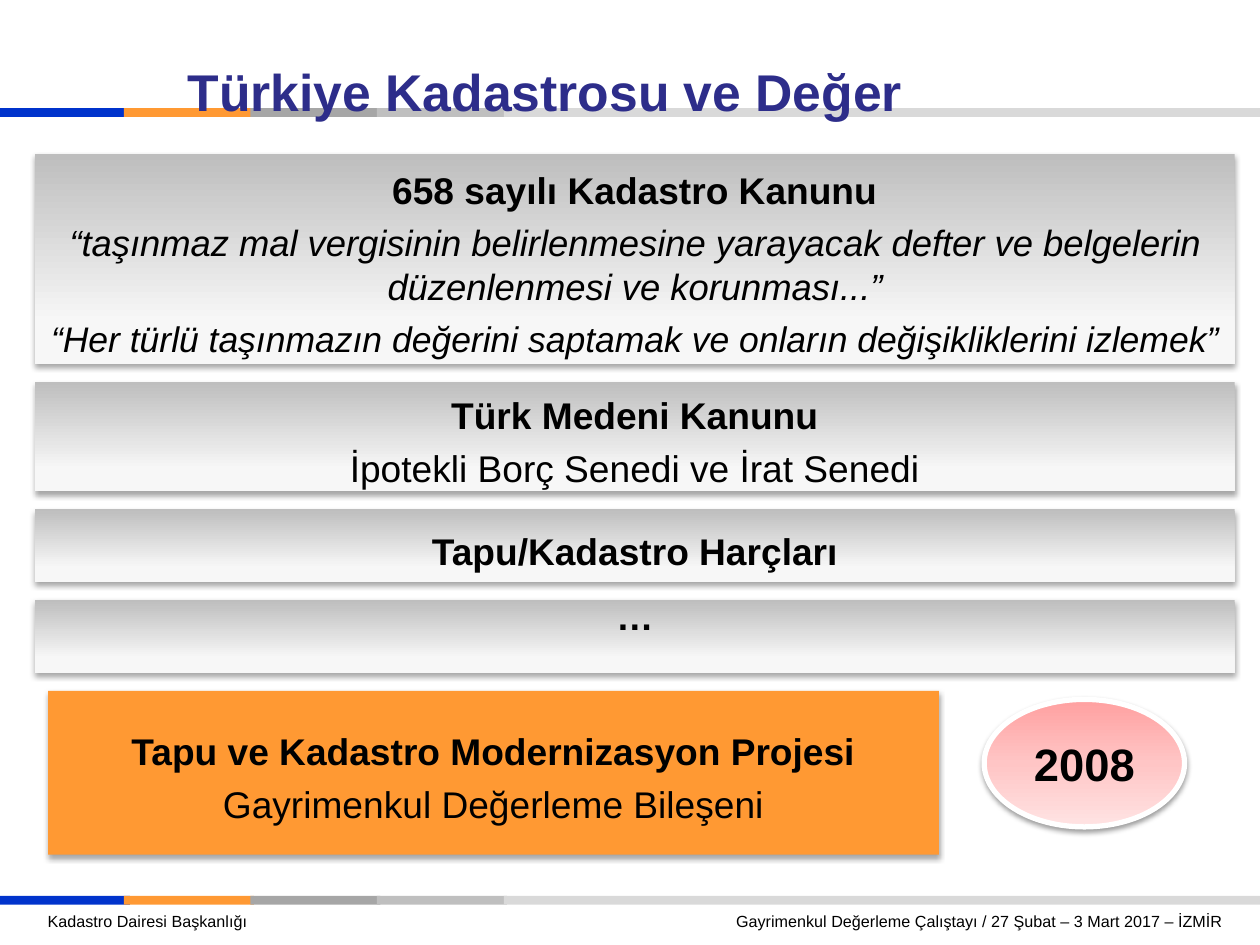
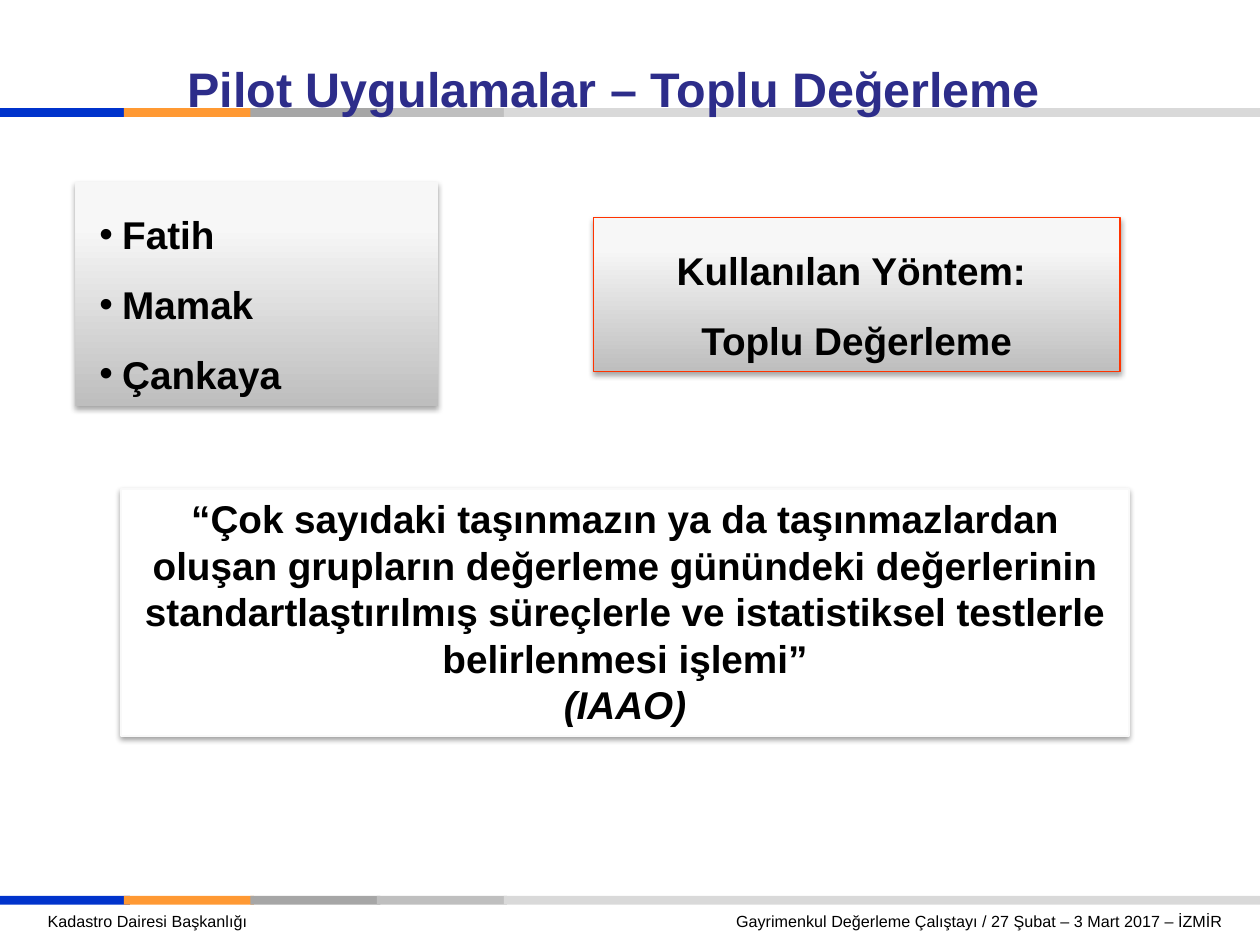
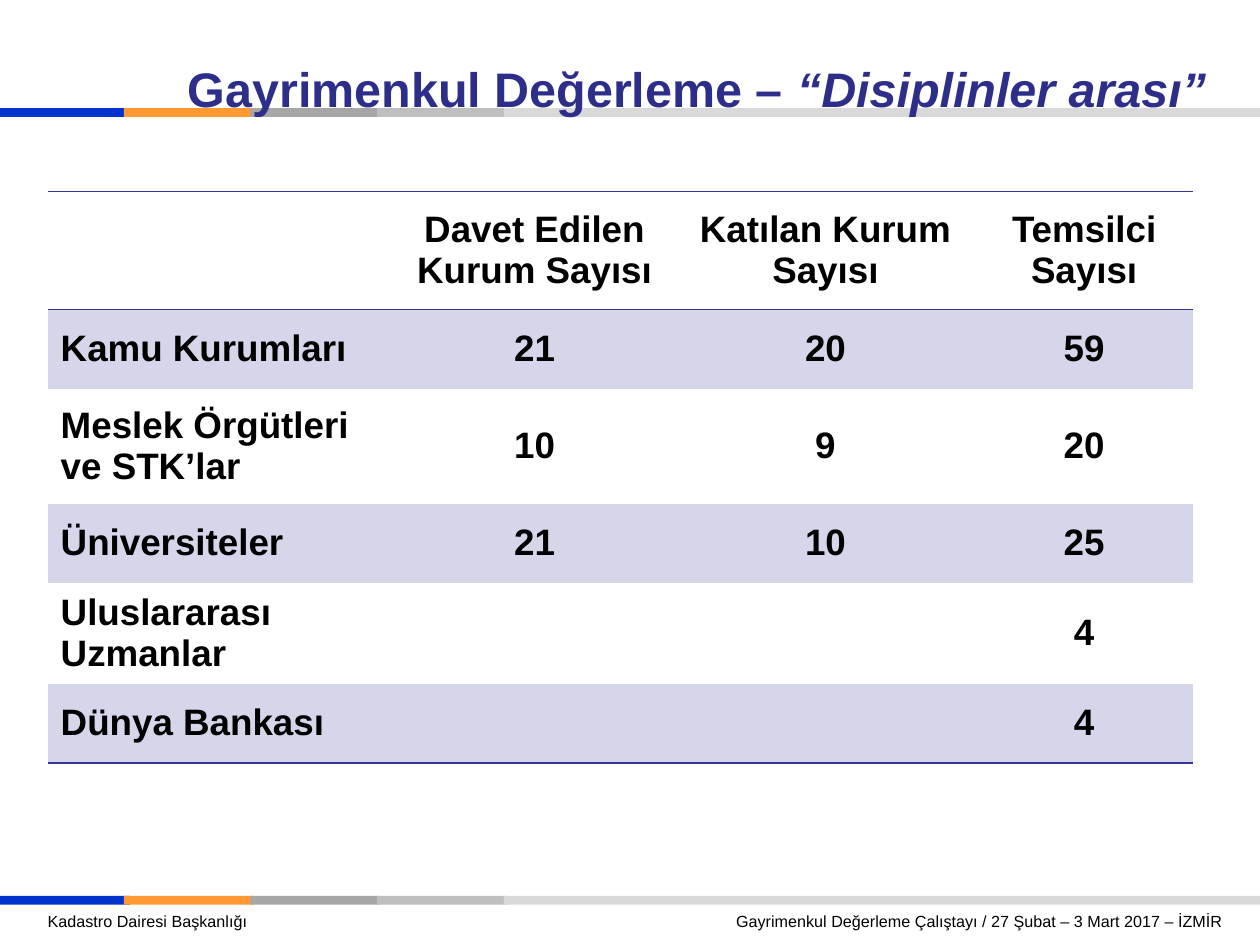
"""Build three slides on cadastre and property valuation in Türkiye."""
from typing import NamedTuple

from pptx import Presentation
from pptx.dml.color import RGBColor
from pptx.enum.shapes import MSO_SHAPE
from pptx.enum.text import MSO_ANCHOR, MSO_AUTO_SIZE, PP_ALIGN
from pptx.oxml import parse_xml
from pptx.oxml.ns import nsdecls, qn
from pptx.util import Cm, Pt

FONT = "Arial"
BLACK, WHITE = "000000", "FFFFFF"
TITLE_BLUE, RULE_BLUE, STRIPE = "2D2D8A", "333399", "D6D6EB"
ORANGE, RED = "FF9933", "FF3300"
GREY_FADE = ((0, "BEBEBE"), (80, "F7F7F7"), (100, "F8F8F8"))
PINK_FADE = ((0, "FFA0A0"), (50, "FFC5C5"), (100, "FFE3E3"))
DOWNWARD, UPWARD = 270, 90
BAND_PARTS = ((0, 2.62, "0033CC"), (2.5, 2.62, ORANGE), (5.05, 2.62, "A6A6A6"),
              (7.6, 2.62, "BFBFBF"), (10.16, 15.24, "D9D9D9"))
BAND_TOPS = (2.18, 18.06)
TITLE_ONLY, TITLE_AND_BODY = 5, 1
NO_TABLE_STYLE = "{2D5ABB26-0587-4C30-8999-92F81FD0307C}"


class Line(NamedTuple):
    """One paragraph of text with its look."""
    text: str
    size: float = 21.2
    bold: bool = True
    italic: bool = False


LAWS = (
    (4.24, (Line("658 sayılı Kadastro Kanunu"),
            Line("“taşınmaz mal vergisinin belirlenmesine yarayacak defter ve "
                 "belgelerin düzenlenmesi ve korunması...”", 20.8, False, True),
            Line("“Her türlü taşınmazın değerini saptamak ve onların "
                 "değişikliklerini izlemek”", 20.3, False, True))),
    (2.21, (Line("Türk Medeni Kanunu"),
            Line("İpotekli Borç Senedi ve İrat Senedi", bold=False))),
    (1.47, (Line("Tapu/Kadastro Harçları"),)),
    (1.47, (Line("…"),)),
)
PARTICIPANTS = (
    ("", "Davet Edilen Kurum Sayısı", "Katılan Kurum Sayısı", "Temsilci Sayısı"),
    ("Kamu Kurumları", "21", "20", "59"),
    ("Meslek Örgütleri ve STK’lar", "10", "9", "20"),
    ("Üniversiteler", "21", "10", "25"),
    ("Uluslararası Uzmanlar", "", "", "4"),
    ("Dünya Bankası", "", "", "4"),
)
COLUMN_WIDTHS = (6.96, 5.69, 6.04, 4.39)
ROW_HEIGHTS = (2.38, 1.6, 2.31, 1.6, 2.03, 1.6)


def rgb(value):
    """Turn a hex string into a colour."""
    return RGBColor.from_string(value)


def set_font(paragraph, size, bold=True, italic=None, color=BLACK):
    """Set the font of a whole paragraph."""
    font = paragraph.font
    font.name, font.size, font.bold, font.italic = FONT, Pt(size), bold, italic
    font.color.rgb = rgb(color)


def write_lines(frame, lines, align=PP_ALIGN.CENTER, gap=0, line_spacing=1.0):
    """Write one paragraph per line, with a gap between them."""
    frame.word_wrap = True
    frame.auto_size = MSO_AUTO_SIZE.NONE
    for index, line in enumerate(lines):
        paragraph = frame.add_paragraph() if index else frame.paragraphs[0]
        paragraph.text = line.text
        paragraph.alignment = align
        paragraph.space_before = Pt(gap if index else 0)
        paragraph.line_spacing = line_spacing
        set_font(paragraph, line.size, line.bold, line.italic)


def place(shape, left, top, width, height):
    """Move and size a shape, in centimetres."""
    shape.left, shape.top = Cm(left), Cm(top)
    shape.width, shape.height = Cm(width), Cm(height)


def fade(shape, stops, angle):
    """Fill a shape with a linear gradient."""
    shape.fill.gradient()
    shape.fill.gradient_angle = angle
    stop_list = shape.element.spPr.find(qn("a:gradFill")).find(qn("a:gsLst"))
    for old_stop in list(stop_list):
        stop_list.remove(old_stop)
    for position, color in stops:
        stop_list.append(parse_xml(
            f'<a:gs {nsdecls("a")} pos="{position * 1000}">'
            f'<a:srgbClr val="{color}"/></a:gs>'))


def cast_shadow(shape, opacity=35, distance=1.8):
    """Give a shape a soft shadow below it."""
    effects = shape.element.spPr.find(qn("a:effectLst"))
    effects.append(parse_xml(
        f'<a:outerShdw {nsdecls("a")} blurRad="{Pt(3.1)}" dist="{Pt(distance)}" '
        f'dir="5400000" rotWithShape="0"><a:srgbClr val="{BLACK}">'
        f'<a:alpha val="{opacity * 1000}"/></a:srgbClr></a:outerShdw>'))


def outline(shape, color, width=0.75):
    """Draw the outline of a shape."""
    shape.line.color.rgb = rgb(color)
    shape.line.width = Pt(width)


def add_panel(slide, box, fill, kind=MSO_SHAPE.RECTANGLE, angle=DOWNWARD):
    """Add a shape with a plain or fading fill and no outline."""
    panel = slide.shapes.add_shape(kind, *map(Cm, box))
    panel.shadow.inherit = False
    panel.line.fill.background()
    if isinstance(fill, str):
        panel.fill.solid()
        panel.fill.fore_color.rgb = rgb(fill)
    else:
        fade(panel, fill, angle)
    return panel


def add_law_box(slide, box, lines, fill=GREY_FADE):
    """Add a shadowed box with centred lines."""
    panel = add_panel(slide, box, fill)
    cast_shadow(panel)
    panel.text_frame.margin_top = Cm(0.3)
    write_lines(panel.text_frame, lines, gap=5)
    return panel


def add_footer(slide):
    """Add the department on the left and the event on the right."""
    footer = slide.shapes.add_textbox(Cm(0.71), Cm(18.24), Cm(24.2), Cm(0.8))
    footer.text_frame.word_wrap = True
    paragraph = footer.text_frame.paragraphs[0]
    paragraph.text = ("Kadastro Dairesi Başkanlığı\tGayrimenkul Değerleme Çalıştayı"
                      " / 27 Şubat – 3 Mart 2017 – İZMİR")
    paragraph._p.get_or_add_pPr().append(parse_xml(
        f'<a:tabLst {nsdecls("a")}><a:tab pos="{Cm(23.68)}" algn="r"/></a:tabLst>'))
    set_font(paragraph, 9.2, bold=False)


def start_slide(deck, layout, heading, emphasis="", size=27.7):
    """Add a slide with bands, footer and a title over the upper band."""
    slide = deck.slides.add_slide(deck.slide_layouts[layout])
    for top in BAND_TOPS:
        for left, width, color in BAND_PARTS:
            add_panel(slide, (left, top, width, 0.18), color)
    add_footer(slide)
    title = slide.shapes.title
    place(title, 3.53, 1.07, 21.26, 1.5)
    frame = title.text_frame
    frame.vertical_anchor = MSO_ANCHOR.TOP
    write_lines(frame, [Line(heading)], PP_ALIGN.LEFT)
    set_font(frame.paragraphs[0], size, color=TITLE_BLUE)
    if emphasis:
        run = frame.paragraphs[0].add_run()
        run.text = emphasis
        run.font.italic = True
    slide.shapes._spTree.append(title.element)
    return slide


def add_rule(cell, side):
    """Draw a thin rule along one side of a table cell."""
    cell._tc.get_or_add_tcPr().insert(0, parse_xml(
        f'<a:{side} {nsdecls("a")} w="{Pt(1)}"><a:solidFill>'
        f'<a:srgbClr val="{RULE_BLUE}"/></a:solidFill></a:{side}>'))


def add_participants(slide):
    """Add the striped table of invited and attending institutions."""
    frame = slide.shapes.add_table(len(PARTICIPANTS), len(COLUMN_WIDTHS), Cm(0.97),
                                   Cm(3.86), Cm(sum(COLUMN_WIDTHS)),
                                   Cm(sum(ROW_HEIGHTS)))
    table = frame.table
    table.first_row = table.horz_banding = False
    table._tbl.tblPr.find(qn("a:tableStyleId")).text = NO_TABLE_STYLE
    for column, width in zip(table.columns, COLUMN_WIDTHS):
        column.width = Cm(width)
    last = len(PARTICIPANTS) - 1
    for row, (height, texts) in enumerate(zip(ROW_HEIGHTS, PARTICIPANTS)):
        table.rows[row].height = Cm(height)
        for column, text in enumerate(texts):
            cell = table.cell(row, column)
            cell.vertical_anchor = MSO_ANCHOR.MIDDLE
            paragraph = cell.text_frame.paragraphs[0]
            paragraph.text = text
            paragraph.alignment = PP_ALIGN.CENTER if column else PP_ALIGN.LEFT
            set_font(paragraph, 21)
            if row % 2:
                cell.fill.solid()
                cell.fill.fore_color.rgb = rgb(STRIPE)
            else:
                cell.fill.background()
            if row in (0, last):
                add_rule(cell, "lnB")
            if row == 0:
                add_rule(cell, "lnT")


def build_laws(deck):
    """Show the laws that tie the cadastre to value."""
    slide = start_slide(deck, TITLE_ONLY, "Türkiye Kadastrosu ve Değer", size=29.5)
    top, gap = 3.1, 0.36
    for height, lines in LAWS:
        law = add_law_box(slide, (0.71, top, 24.18, height), lines)
        top += height + gap
    law.text_frame.margin_top, law.text_frame.margin_bottom = 0, Cm(0.84)
    add_law_box(slide, (0.97, top, 17.96, 3.3),
                (Line("Tapu ve Kadastro Modernizasyon Projesi"),
                 Line("Gayrimenkul Değerleme Bileşeni", bold=False)), ORANGE)
    year = add_panel(slide, (19.84, 14.1, 4.04, 2.57), PINK_FADE, MSO_SHAPE.OVAL)
    outline(year, WHITE, 3)
    cast_shadow(year, 38, 1.6)
    write_lines(year.text_frame, [Line("2008", 25.9)])


def build_pilots(deck):
    """Show the pilot districts and the method used."""
    slide = start_slide(deck, TITLE_AND_BODY, "Pilot Uygulamalar – Toplu Değerleme")
    districts = slide.placeholders[1]
    place(districts, 1.52, 3.66, 7.32, 4.52)
    fade(districts, GREY_FADE, UPWARD)
    districts.shadow.inherit = False
    cast_shadow(districts)
    write_lines(districts.text_frame,
                [Line(name, 22.1) for name in ("Fatih", "Mamak", "Çankaya")],
                PP_ALIGN.LEFT, line_spacing=1.5)
    for paragraph in districts.text_frame.paragraphs:
        properties = paragraph._p.get_or_add_pPr()
        properties.set("marL", str(Cm(0.69)))
        properties.set("indent", str(Cm(-0.46)))

    method = add_panel(slide, (11.96, 4.39, 10.62, 3.1), GREY_FADE, angle=UPWARD)
    outline(method, RED)
    cast_shadow(method)
    method.text_frame.vertical_anchor = MSO_ANCHOR.TOP
    write_lines(method.text_frame, (Line("Kullanılan Yöntem: ", 22.1),
                                    Line("Toplu Değerleme", 22.1)), line_spacing=1.5)

    definition = add_panel(slide, (2.44, 9.86, 20.32, 4.98), WHITE)
    outline(definition, "F9F9F9")
    cast_shadow(definition, 38, 1.6)
    definition.text_frame.vertical_anchor = MSO_ANCHOR.TOP
    write_lines(definition.text_frame, (
        Line("“Çok sayıdaki taşınmazın ya da taşınmazlardan oluşan grupların "
             "değerleme günündeki değerlerinin standartlaştırılmış süreçlerle ve "
             "istatistiksel testlerle belirlenmesi işlemi”", 22.1),
        Line("(IAAO)", 22.1, italic=True)))


def build_disciplines(deck):
    """Show how many institutions of each kind took part."""
    slide = start_slide(deck, TITLE_ONLY, "Gayrimenkul Değerleme – ",
                        "“Disiplinler arası”")
    add_participants(slide)


def main():
    """Build and save the deck."""
    deck = Presentation()
    deck.slide_width, deck.slide_height = Cm(25.4), Cm(19.05)
    build_laws(deck)
    build_pilots(deck)
    build_disciplines(deck)
    deck.save("out.pptx")


if __name__ == "__main__":
    main()
